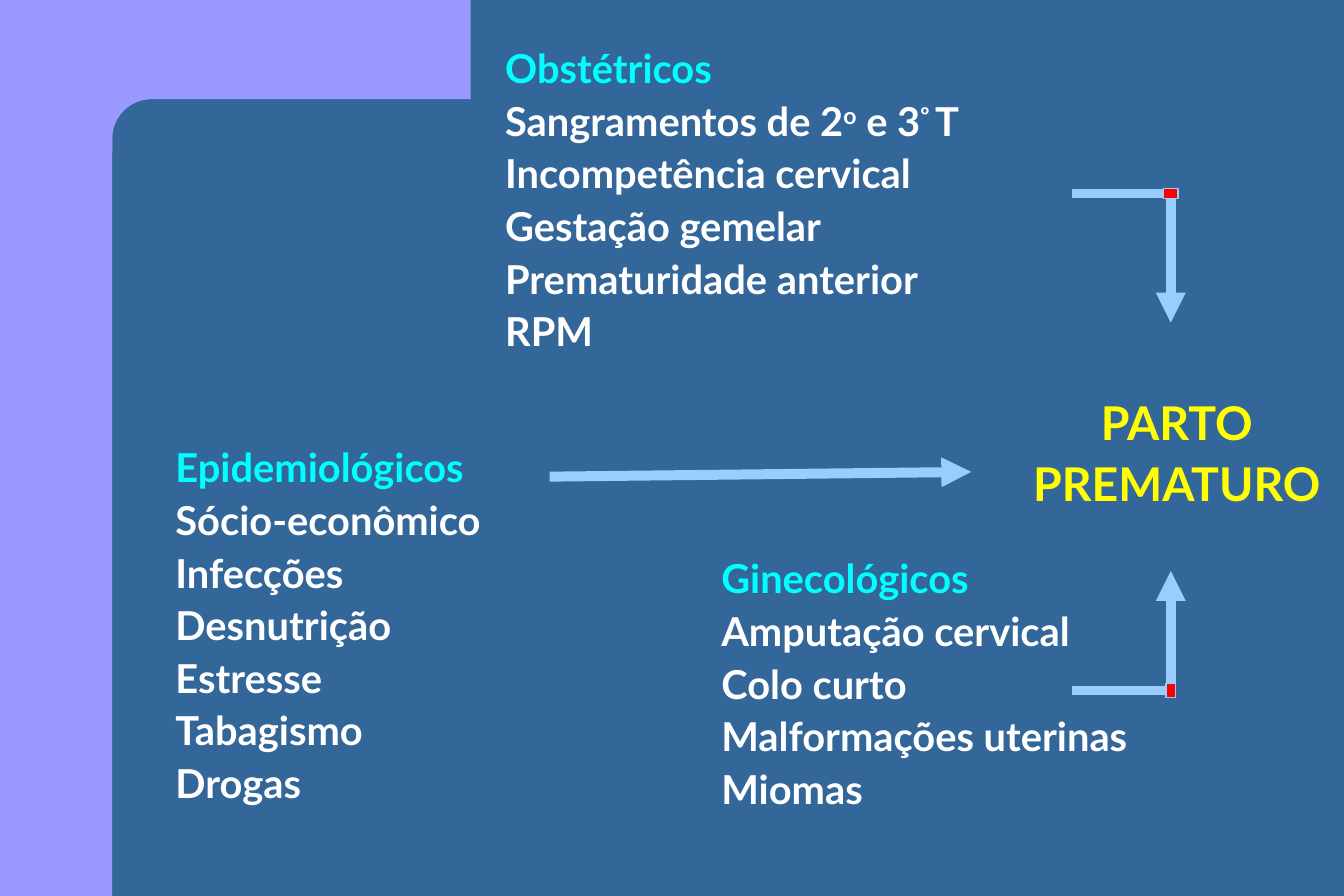
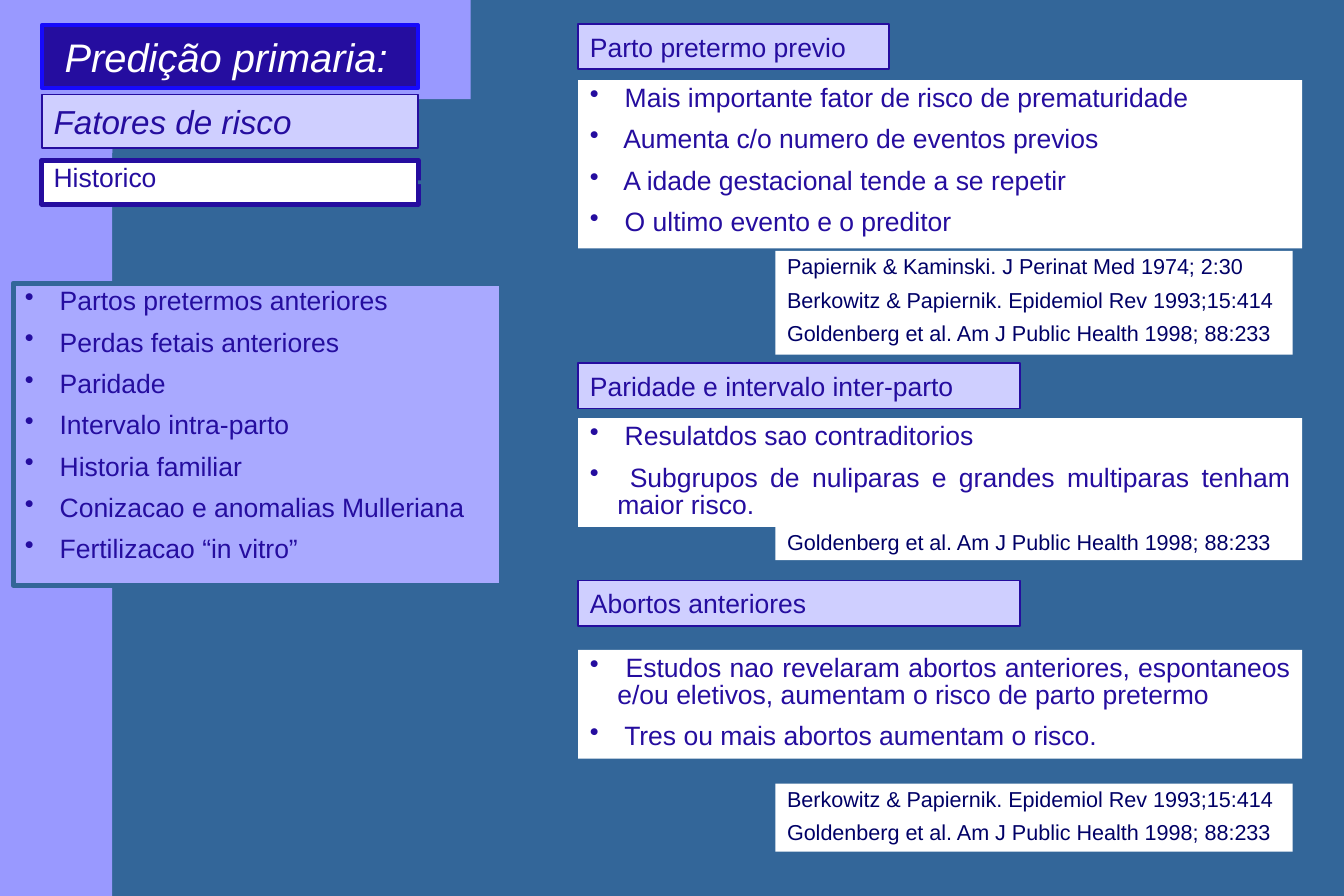
from math import cos, pi, sin

from lxml.etree import SubElement
from pptx import Presentation
from pptx.dml.color import RGBColor
from pptx.enum.shapes import MSO_CONNECTOR, MSO_SHAPE
from pptx.enum.text import MSO_ANCHOR, PP_ALIGN
from pptx.oxml.ns import qn
from pptx.util import Inches, Pt

BACK, BAND, INK, NAVY = "336699", "9999FF", "250D9F", "000066"
PALE, LILAC, WHITE, ARROW = "CFCFFF", "A9A9FF", "FFFFFF", "99CCFF"
CYAN, YELLOW, RED, BLUE = "00FFFF", "FFFF00", "FF0000", "160AFC"

# Text between carets is superscript.
CAUSES = [
    ((4.13, 0.28, 4.78, 3.6), "Obstétricos", [
        "Sangramentos de 2^o^ e 3^º ^T", "Incompetência cervical",
        "Gestação gemelar", "Prematuridade anterior", "RPM"]),
    ((1.37, 3.62, 4.31, 3.18), "Epidemiológicos", [
        "Sócio-econômico", "Infecções", "Desnutrição", "Estresse",
        "Tabagismo", "Drogas"]),
    ((5.94, 4.55, 5.04, 2.3), "Ginecológicos", [
        "Amputação cervical", "Colo curto", "Malformações uterinas",
        "Miomas"]),
]
RESULT = ["PARTO", "PREMATURO"]
# Corner height, arrow tip height, joint box
ELBOWS = [
    (5.78, 4.78, (9.76, 5.72, 0.08, 0.12)),
    (1.62, 2.7, (9.74, 1.58, 0.12, 0.08)),
]

HISTORY = [
    "Partos pretermos anteriores", "Perdas fetais anteriores", "Paridade",
    "Intervalo intra-parto", "Historia familiar",
    "Conizacao e anomalias Mulleriana", "Fertilizacao “in vitro”"]
PAPIERNIK = "Papiernik & Kaminski. J Perinat Med 1974; 2:30"
BERKOWITZ = "Berkowitz & Papiernik. Epidemiol Rev 1993;15:414"
GOLDENBERG = "Goldenberg et al. Am J Public Health 1998; 88:233"
# Each part: (top, width, height, text)
TOPICS = [
    ((0.2, 2.6, 0.38, "Parto pretermo previo"),
     (0.67, 6.06, 1.41, [
         "Mais importante fator de risco de prematuridade",
         "Aumenta c/o numero de eventos previos",
         "A idade gestacional tende a se repetir",
         "O ultimo evento e o preditor"]),
     (2.1, 4.33, 0.87, [PAPIERNIK, BERKOWITZ, GOLDENBERG])),
    ((3.04, 3.7, 0.38, "Paridade e intervalo inter-parto"),
     (3.5, 6.06, 0.91, [
         "Resulatdos sao contraditorios",
         "Subgrupos de nuliparas e grandes multiparas tenham maior risco."]),
     (4.41, 4.41, 0.28, [GOLDENBERG])),
    ((4.86, 3.7, 0.38, "Abortos anteriores"),
     (5.44, 6.06, 0.91, [
         "Estudos nao revelaram abortos anteriores, espontaneos e/ou "
         "eletivos, aumentam o risco de parto pretermo",
         "Tres ou mais abortos aumentam o risco."]),
     (6.56, 4.33, 0.57, [BERKOWITZ, GOLDENBERG])),
]


def color(code):
    return RGBColor.from_string(code)


def place(box):
    return [Inches(n) for n in box]


def paint(shape, fill=None, line=None, width=1):
    shape.shadow.inherit = False
    if fill:
        shape.fill.solid()
        shape.fill.fore_color.rgb = color(fill)
    else:
        shape.fill.background()
    if line:
        shape.line.color.rgb = color(line)
        shape.line.width = Pt(width)
    else:
        shape.line.fill.background()
    return shape


def rect(slide, box, fill=None, line=None, width=1):
    shape = slide.shapes.add_shape(MSO_SHAPE.RECTANGLE, *place(box))
    return paint(shape, fill, line, width)


def style(par, size, ink, font="Arial", bold=False, italic=False):
    for run in par.runs:
        run.font.name = font
        run.font.size = Pt(size)
        run.font.color.rgb = color(ink)
        run.font.bold = bold
        run.font.italic = italic


def lines(frame, texts):
    """Yield one paragraph for each text, the frame's first one included."""
    for i, text in enumerate(texts):
        yield (frame.add_paragraph() if i else frame.paragraphs[0]), text


def label(slide, box, text, size, fill=PALE, ink=INK, edge=INK, width=1,
          italic=False):
    shape = rect(slide, box, fill, edge, width)
    frame = shape.text_frame
    frame.text = text
    frame.vertical_anchor = MSO_ANCHOR.MIDDLE
    par = frame.paragraphs[0]
    par.alignment = PP_ALIGN.LEFT
    style(par, size, ink, italic=italic)


def panel(slide, box, texts, size=16, ink=INK, fill=WHITE, edge=None,
          bullets=True):
    shape = rect(slide, box, fill, edge, 3)
    frame = shape.text_frame
    frame.word_wrap = True
    frame.vertical_anchor = MSO_ANCHOR.TOP
    for i, (par, text) in enumerate(lines(frame, texts)):
        par.text = " " + text if bullets else text
        par.alignment = PP_ALIGN.JUSTIFY
        par.line_spacing = 0.85
        par.space_before = Pt(size * 0.54 if i else 0)
        style(par, size, ink)
        if bullets:
            props = par._p.get_or_add_pPr()
            props.set("marL", str(Inches(0.23)))
            props.set("indent", str(-Inches(0.23)))
            SubElement(props, qn("a:buChar"), char="•")
    return shape


def column(slide, box, texts, inks, size=24, align=PP_ALIGN.LEFT):
    frame = slide.shapes.add_textbox(*place(box)).text_frame
    frame.word_wrap = True
    for (par, text), ink in zip(lines(frame, texts), inks):
        for i, part in enumerate(text.split("^")):
            run = par.add_run()
            run.text = part
            if i % 2:
                run.font._element.set("baseline", "30000")
        par.alignment = align
        par.line_spacing = 1.1
        style(par, size, ink, "Lato", bold=True)


def link(slide, start, end, ink=ARROW, width=6, arrow=False):
    wire = slide.shapes.add_connector(
        MSO_CONNECTOR.STRAIGHT, *place(start + end))
    wire.line.color.rgb = color(ink)
    wire.line.width = Pt(width)
    if arrow:
        SubElement(wire.line._get_or_add_ln(), qn("a:tailEnd"),
                   type="triangle")
    SubElement(wire._element.spPr, qn("a:effectLst"))
    return wire


def dress(master, slide):
    """Draw the side band and corner, then move them to the master."""
    master.background.fill.solid()
    master.background.fill.fore_color.rgb = color(BACK)
    turns = [pi / 2 * i / 12 for i in range(13)]
    curve = [(1.27 - 0.33 * sin(t), 1.16 - 0.33 * cos(t)) for t in turns]
    points = [(3.94, 0.83), *curve, (0.94, 1.28), (0.56, 1.28), (0.56, 0)]
    pen = slide.shapes.build_freeform(Inches(3.94), 0)
    pen.add_line_segments([place(point) for point in points])
    corner = paint(pen.convert_to_shape(), BAND)
    band = rect(slide, (0, 0, 0.94, 7.5), BAND)
    for number, shape in enumerate((band, corner), 101):
        shape.element.nvSpPr.cNvPr.set("id", str(number))
        master.shapes.element.append(shape.element)


def causes(slide):
    for box, head, items in CAUSES:
        column(slide, box, [head, *items], [CYAN] + [WHITE] * len(items))
    column(slide, (8.45, 3.2, 2.8, 1.57), RESULT, [YELLOW] * 2, 28,
           PP_ALIGN.CENTER)
    link(slide, (4.6, 3.99), (8.13, 3.95), arrow=True)
    for turn, tip, joint in ELBOWS:
        link(slide, (9.8, turn), (8.97, turn))
        link(slide, (9.8, turn), (9.8, tip), arrow=True)
        rect(slide, joint, RED, ARROW, 0.75)


def risks(slide):
    label(slide, (0.35, 0.79, 3.15, 0.45), "Fatores de risco", 20,
          italic=True)
    label(slide, (0.35, 0.21, 3.15, 0.53), " Predição primaria:", 24,
          INK, WHITE, BLUE, 2.25, True)
    past = panel(slide, (0.35, 1.34, 3.15, 0.37), ["Historico"], edge=INK,
                 bullets=False)
    wire = link(slide, (3.5, 1.53), (4.52, 1.53), BACK, 2.25)
    wire.begin_connect(past, 3)
    rect(slide, (4.52, 0.05, 6.53, 7.32), line=BACK, width=2.25)
    for head, facts, refs in TOPICS:
        top, wide, high, text = head
        label(slide, (4.84, top, wide, high), text, 16)
        top, wide, high, texts = facts
        panel(slide, (4.84, top, wide, high), texts)
        top, wide, high, texts = refs
        panel(slide, (6.49, top, wide, high), texts, 13, NAVY, bullets=False)
    panel(slide, (0.11, 2.37, 4.09, 2.53), HISTORY, fill=LILAC, edge=BACK)


def main():
    deck = Presentation()
    deck.slide_width, deck.slide_height = Inches(11.25), Inches(7.5)
    first, second = [deck.slides.add_slide(deck.slide_layouts[6])
                     for _ in range(2)]
    dress(deck.slide_master, first)
    causes(first)
    risks(second)
    deck.save("out.pptx")


if __name__ == "__main__":
    main()
